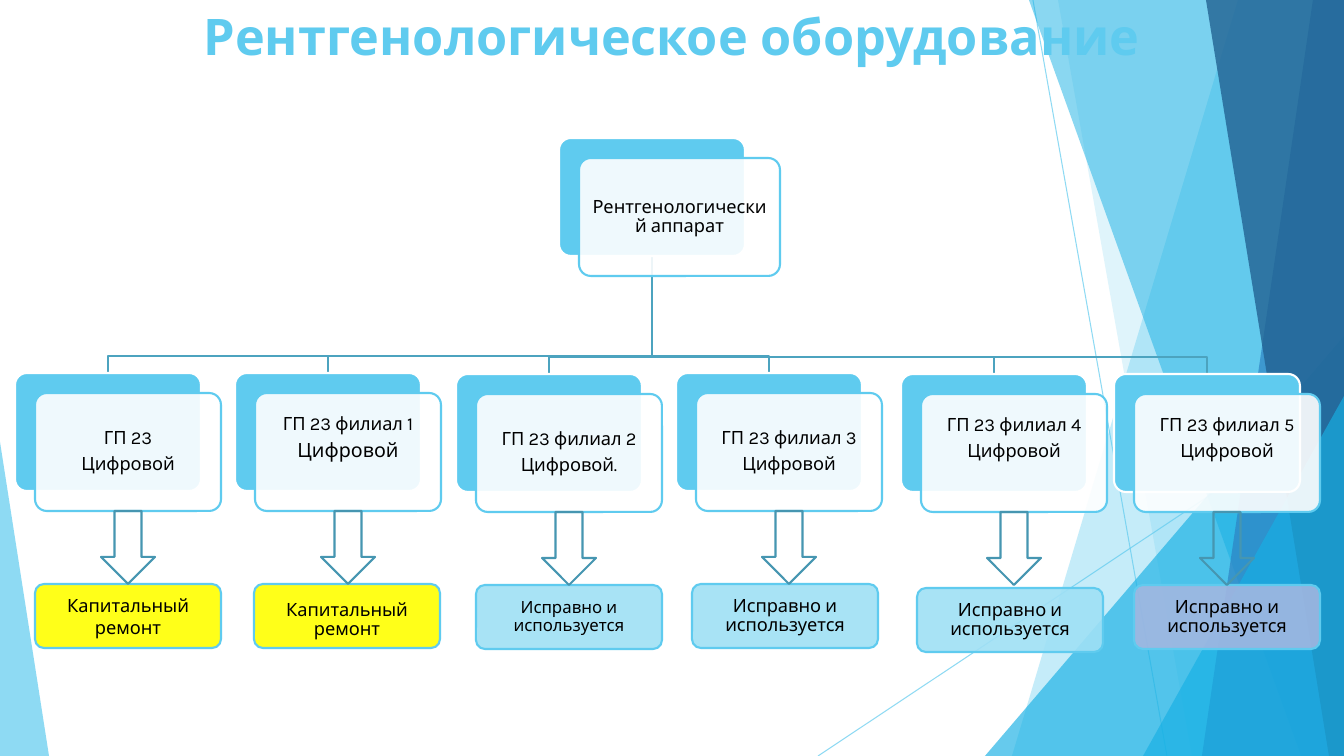
from dataclasses import dataclass

import pptx
import pptx.dml.color
import pptx.enum.shapes
import pptx.enum.text
import pptx.oxml
import pptx.oxml.ns
import pptx.util

PX = 914400 / 100.8
SLIDE_W, SLIDE_H = 1344, 756
FONT = "Karla"
SKY, AZURE, BLACK, WHITE = "5FCBEF", "17B0E4", "000000", "FFFFFF"
YELLOW, PALE_BLUE, LILAC = "FFFF00", "9FE0F5", "A1B7E1"
CARD_W, CARD_H, CARD_OFFSET = 186, 118, 20
STATUS_H = 64
ARROW_W = 54
BUS_RISE = 17  # distance from the horizontal branch line down to a card
ROUND = pptx.enum.shapes.MSO_SHAPE.ROUNDED_RECTANGLE
TRIANGLE = pptx.enum.shapes.MSO_SHAPE.ISOSCELES_TRIANGLE
DOWN_ARROW = pptx.enum.shapes.MSO_SHAPE.DOWN_ARROW


@dataclass
class Facet:
    points: list[tuple[int, int]]
    color: str
    alpha: int


@dataclass
class Wedge:
    left: int
    top: int
    width: int
    height: int
    apex: float
    color: str
    alpha: int


@dataclass
class Label:
    lines: list[str]
    sizes: list[int]
    shift: int = 0  # px moved down from the middle of the box
    spacing: float = 0.9


@dataclass
class Branch:
    left: int
    top: int
    label: Label
    status: Label
    status_left: int
    status_top: int
    status_color: str


DECOR = [
    Facet([(1238, 0), (1344, 0), (1344, 756), (1012, 756)], SKY, 36),
    Facet([(1058, 0), (1344, 0), (1344, 756), (1192, 756)], SKY, 20),
    Wedge(985, 336, 359, 420, 1, AZURE, 66),
    Facet([(1029, 0), (1344, 0), (1344, 756), (1301, 756)], AZURE, 50),
    Facet([(1313, 0), (1344, 0), (1344, 756), (1202, 756)], "2E83C3", 70),
    Facet([(1206, 0), (1344, 0), (1344, 756), (1329, 756)], "226292", 80),
    Wedge(1143, 396, 201, 360, 1, AZURE, 66),
    Wedge(0, 442, 49, 314, 0, SKY, 70),
]
REPAIR, WORKING = ["Капитальный ремонт"], ["Исправно и используется"]
DIGITAL = "Цифровой"
BRANCHES = [
    Branch(35, 393, Label(["ГП 23", DIGITAL], [13, 13]),
           Label(REPAIR, [13], spacing=1), 35, 584, YELLOW),
    Branch(255, 393, Label(["ГП 23 филиал 1", DIGITAL], [13, 14], -14),
           Label(REPAIR, [13], 4), 254, 584, YELLOW),
    Branch(476, 394, Label(["ГП 23 филиал 2", "Цифровой."], [13, 13]),
           Label(WORKING, [12]), 476, 585, PALE_BLUE),
    Branch(696, 393, Label(["ГП 23 филиал 3", DIGITAL], [13, 13]),
           Label(WORKING, [13]), 692, 584, PALE_BLUE),
    Branch(921, 394, Label(["ГП 23 филиал 4", DIGITAL], [13, 13], -14),
           Label(WORKING, [13]), 917, 588, PALE_BLUE),
    Branch(1134, 394, Label(["ГП 23 филиал 5", DIGITAL], [13, 13], -14),
           Label(WORKING, [13]), 1134, 585, LILAC),
]
ROOT_LEFT, ROOT_TOP, ROOT_W = 579, 158, 201


def px(length: float) -> int:
    return round(length * PX)


def rgb(color: str) -> pptx.dml.color.RGBColor:
    return pptx.dml.color.RGBColor.from_string(color)


def set_alpha(shape, container: str, alpha: int) -> None:
    """Make the fill ("a:solidFill") or line ("a:ln/a:solidFill") see-through."""
    tags = container.split("/") + ["a:srgbClr"]
    color = shape._element.spPr.find("/".join(map(pptx.oxml.ns.qn, tags)))
    element = pptx.oxml.parse_xml(
        f'<a:alpha {pptx.oxml.ns.nsdecls("a")} val="{alpha * 1000}"/>')
    color.append(element)


def style(shape, fill: str | None, line: str | None, alpha: int = 100) -> None:
    shape.shadow.inherit = False
    if fill:
        shape.fill.solid()
        shape.fill.fore_color.rgb = rgb(fill)
        if alpha < 100:
            set_alpha(shape, "a:solidFill", alpha)
    else:
        shape.fill.background()
    if line:
        shape.line.color.rgb = rgb(line)
        shape.line.width = pptx.util.Pt(1.5)
    else:
        shape.line.fill.background()


def add_preset(page, kind, left: int, top: int, width: int, height: int):
    return page.shapes.add_shape(kind, px(left), px(top), px(width), px(height))


def add_path(page, points: list[tuple[int, int]], close: bool):
    builder = page.shapes.build_freeform(*points[0], scale=PX)
    builder.add_line_segments(points[1:], close=close)
    return builder.convert_to_shape()


def add_thin_line(page, x1: int, y1: int, x2: int, y2: int) -> None:
    line = page.shapes.add_connector(
        pptx.enum.shapes.MSO_CONNECTOR.STRAIGHT, px(x1), px(y1), px(x2), px(y2))
    line.line.color.rgb = rgb(SKY)
    line.line.width = pptx.util.Pt(0.75)
    set_alpha(line, "a:ln/a:solidFill", 70)
    line._element.spPr.append(
        pptx.oxml.parse_xml(f'<a:effectLst {pptx.oxml.ns.nsdecls("a")}/>'))


def add_decor(page) -> None:
    add_thin_line(page, 1033, 0, 1167, SLIDE_H)
    add_thin_line(page, SLIDE_W, 406, 818, SLIDE_H)
    for item in DECOR:
        if isinstance(item, Facet):
            shape = add_path(page, item.points, True)
        else:
            shape = add_preset(page, TRIANGLE, item.left, item.top, item.width, item.height)
            shape.adjustments[0] = item.apex
        style(shape, item.color, None, item.alpha)


def write(shape, label: Label, color: str = BLACK, bold: bool = False) -> None:
    frame = shape.text_frame
    frame.word_wrap = True
    frame.vertical_anchor = pptx.enum.text.MSO_ANCHOR.MIDDLE
    frame.margin_left = frame.margin_right = px(9)
    frame.margin_top = px(2 + max(0, 2 * label.shift))
    frame.margin_bottom = px(2 + max(0, -2 * label.shift))
    for index, (line, size) in enumerate(zip(label.lines, label.sizes)):
        para = frame.add_paragraph() if index else frame.paragraphs[0]
        para.text = line
        para.alignment = pptx.enum.text.PP_ALIGN.CENTER
        para.line_spacing = label.spacing
        para.space_after = pptx.util.Pt(4.5)
        para.font.name = FONT
        para.font.size = pptx.util.Pt(size)
        para.font.bold = bold
        para.font.color.rgb = rgb(color)


def add_card(page, left: int, top: int, width: int, label: Label) -> None:
    """Draw a white card with a blue card behind it, up and to the left."""
    back = add_preset(page, ROUND, left - CARD_OFFSET, top - CARD_OFFSET, CARD_W, CARD_H)
    back.adjustments[0] = 0.1
    style(back, SKY, WHITE)
    front = add_preset(page, ROUND, left, top, width, CARD_H)
    front.adjustments[0] = 0.1
    style(front, WHITE, SKY, 90)
    write(front, label)


def add_tree_line(page, branch: Branch) -> None:
    trunk = ROOT_LEFT - CARD_OFFSET + CARD_W // 2
    drop = branch.left - CARD_OFFSET + CARD_W // 2
    end = branch.top - CARD_OFFSET
    bus = end - BUS_RISE
    start = ROOT_TOP - CARD_OFFSET + CARD_H
    path = add_path(page, [(trunk, start), (trunk, bus), (drop, bus), (drop, end)], False)
    style(path, None, "4CA3BF")


def add_branch(page, branch: Branch) -> None:
    add_card(page, branch.left, branch.top, CARD_W, branch.label)
    status = add_preset(page, ROUND, branch.status_left, branch.status_top, CARD_W, STATUS_H)
    status.adjustments[0] = 0.14
    style(status, branch.status_color, SKY, 90)
    write(status, branch.status)
    arrow = add_preset(page, DOWN_ARROW, branch.left + (CARD_W - ARROW_W) // 2,
                       branch.top + CARD_H, ARROW_W, 73)
    style(arrow, None, "4696B1")


def main() -> None:
    deck = pptx.Presentation()
    deck.slide_width, deck.slide_height = px(SLIDE_W), px(SLIDE_H)
    page = deck.slides.add_slide(deck.slide_layouts[6])
    add_decor(page)
    title = page.shapes.add_textbox(0, 0, px(SLIDE_W), px(70))
    write(title, Label(["Рентгенологическое оборудование"], [36], spacing=1), SKY, True)
    for branch in BRANCHES:
        add_tree_line(page, branch)
    add_card(page, ROOT_LEFT, ROOT_TOP, ROOT_W, Label(["Рентгенологический аппарат"], [13]))
    for branch in BRANCHES:
        add_branch(page, branch)
    deck.save("out.pptx")


if __name__ == "__main__":
    main()
